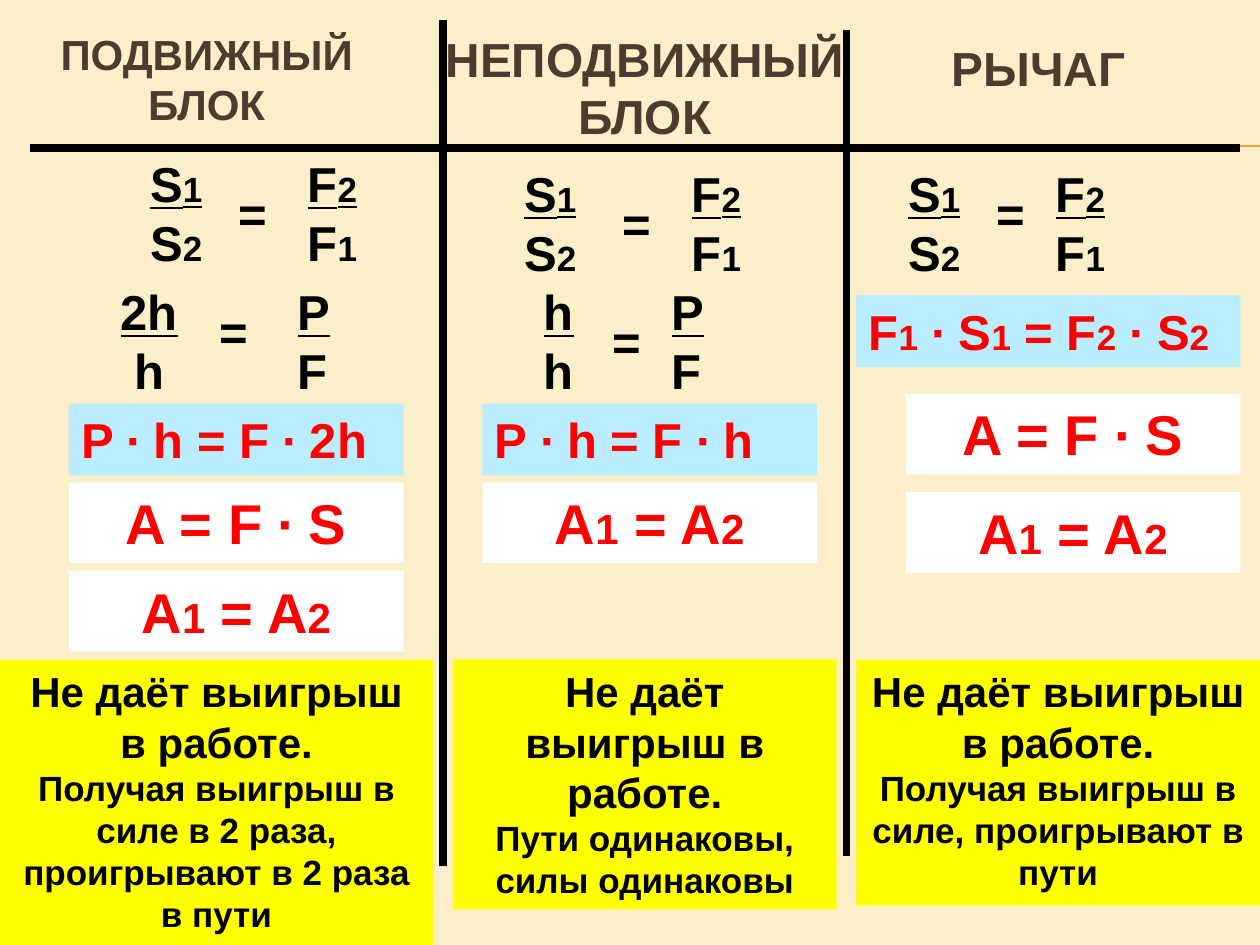
from dataclasses import dataclass

from lxml import etree
from pptx import Presentation
from pptx.dml.color import RGBColor
from pptx.enum.shapes import MSO_CONNECTOR, MSO_SHAPE
from pptx.enum.text import MSO_ANCHOR, MSO_AUTO_SIZE, PP_ALIGN
from pptx.oxml.ns import qn
from pptx.util import Inches, Pt

LEFT, CENTER = PP_ALIGN.LEFT, PP_ALIGN.CENTER
TOP, MIDDLE = MSO_ANCHOR.TOP, MSO_ANCHOR.MIDDLE
GROW, FIXED = MSO_AUTO_SIZE.SHAPE_TO_FIT_TEXT, MSO_AUTO_SIZE.NONE
RECTANGLE, STRAIGHT = MSO_SHAPE.RECTANGLE, MSO_CONNECTOR.STRAIGHT
TITLE_ONLY = 5


@dataclass(frozen=True)
class Theme:
    font: str = "Arial"
    page: str = "FBEEC9"
    accent: str = "F0A22E"
    heading: str = "4E3B30"
    ink: str = "000000"
    formula: str = "FF0000"
    law: str = "B9EDFF"
    work: str = "FFFFFF"
    verdict: str = "FFFF00"
    title_size: float = 24
    heading_size: float = 27.3
    work_size: float = 32
    work_index: float = 24
    law_size: float = 28
    law_index: float = 20
    verdict_size: float = 24
    detail_size: float = 20


THEME = Theme()
WIDTH, HEIGHT = Inches(10), Inches(7.5)
COLUMNS, ROWS = 128, 96  # square grid cells over the whole slide
RULE_ROW = 15
RATIO_WIDTH, RATIO_HEIGHT = 11, 13.3
LAW_HEIGHT, WORK_HEIGHT = 7.3, 8.2
VERDICT_ROW = 67


def place(left, top, width, height):
    cell_x, cell_y = WIDTH / COLUMNS, HEIGHT / ROWS
    return [round(v) for v in (left * cell_x, top * cell_y, width * cell_x, height * cell_y)]


def write(box, *lines, sizes, index=None, color=THEME.ink, align=LEFT,
          anchor=TOP, fit=GROW, underline_first=False):
    """Fill a box; an underscore makes the next character a small index."""
    frame = box.text_frame
    frame.word_wrap, frame.vertical_anchor, frame.auto_size = True, anchor, fit
    for number, (line, size) in enumerate(zip(lines, sizes)):
        para = frame.paragraphs[0] if number == 0 else frame.add_paragraph()
        para.alignment = align
        first, *indexed = line.split("_")
        parts = [(first, size)]
        for part in indexed:
            parts += [(part[0], index), (part[1:], size)]
        for text, points in parts:
            if text:
                span = para.add_run()
                span.text = text
                span.font.name, span.font.size, span.font.bold = THEME.font, Pt(points), True
                span.font.color.rgb = RGBColor.from_string(color)
                span.font.underline = underline_first and number == 0


def add_text(page, area, *lines, **style):
    write(page.shapes.add_textbox(*place(*area)), *lines, **style)


def add_panel(page, area, fill, *lines, **style):
    panel = page.shapes.add_shape(RECTANGLE, *place(*area))
    panel.shadow.inherit = False
    panel.fill.solid()
    panel.fill.fore_color.rgb = RGBColor.from_string(fill)
    panel.line.fill.background()
    write(panel, *lines, **style)


def add_rule(page, start, end, color, weight):
    x1, y1, x2, y2 = place(*start, *end)
    rule = page.shapes.add_connector(STRAIGHT, x1, y1, x2, y2)
    rule.line.color.rgb = RGBColor.from_string(color)
    rule.line.width = Pt(weight)
    etree.SubElement(rule._element.spPr, qn("a:effectLst"))


def add_proportion(page, left, top, ratios, equals):
    """Two stacked ratios with an equals sign, offset from left and top."""
    for offset, upper, lower, align in ratios:
        add_text(page, (left + offset, top, RATIO_WIDTH, RATIO_HEIGHT), upper, lower,
                 sizes=[THEME.law_size] * 2, index=THEME.law_index,
                 align=align, underline_first=True)
    across, down = equals
    add_text(page, (left + across, top + down, 7, LAW_HEIGHT), "=", sizes=[THEME.law_size])


def ratio(offset, upper, lower, align=LEFT):
    return offset, upper, lower, align


def path_force(first, second):
    return [ratio(first, "S_1", "S_2"), ratio(second, "F_2", "F_1")]


def add_column(page, left, heading, proportions, law, works, verdict):
    # Heading
    text, area, size = heading
    offset, top, width, height = area
    area = (left + offset, top, width, height)
    style = dict(sizes=[size], color=THEME.heading, align=CENTER, anchor=MIDDLE, fit=FIXED)
    if left == 0:
        title = page.shapes.title
        title.left, title.top, title.width, title.height = place(*area)
        write(title, text, **style)
    else:
        add_text(page, area, text, **style)
    # Proportions
    for top, ratios, equals in proportions:
        add_proportion(page, left, top, ratios, equals)
    # Resulting law
    text, offset, top, width = law
    add_panel(page, (left + offset, top, width, LAW_HEIGHT), THEME.law, text,
              sizes=[THEME.law_size], index=THEME.law_index, color=THEME.formula)
    # Work formulas
    for text, offset, top in works:
        add_panel(page, (left + offset, top, 34, WORK_HEIGHT), THEME.work, text,
                  sizes=[THEME.work_size], index=THEME.work_index,
                  color=THEME.formula, align=CENTER)
    # Verdict
    detail, offset, width, height = verdict
    add_panel(page, (left + offset, VERDICT_ROW, width, height), THEME.verdict,
              "Не даёт выигрыш в работе.", detail,
              sizes=[THEME.verdict_size, THEME.detail_size], align=CENTER)


def add_rules(page):
    for row in (14.75, 14.85):
        add_rule(page, (7.2, row), (COLUMNS, row), THEME.accent, 0.75)
    for start, end in (((45, 2), (45, 88)),
                       ((3, RULE_ROW), (126, RULE_ROW)),
                       ((86, 3), (86, 87))):
        add_rule(page, start, end, THEME.ink, 4.5)


WORK, EQUAL_WORK = "A = F ∙ S", "A_1 = A_2"
MECHANISMS = [
    dict(left=0,
         heading=("ПОДВИЖНЫЙ БЛОК", (3, 2, 36, 12), THEME.title_size),
         proportions=[(15, path_force(14, 30), (23, 3)),
                      (28, [ratio(9.65, "2h", "h", CENTER), ratio(29, "P", "F")], (21, 2))],
         law=("P ∙ h = F ∙ 2h", 7, 41, 34),
         works=[(WORK, 7, 49), (EQUAL_WORK, 7, 58)],
         verdict=("Получая выигрыш в силе в 2 раза, проигрывают в 2 раза в пути", 0, 44, 29)),
    dict(left=45,
         heading=("НЕПОДВИЖНЫЙ БЛОК", (-3, 2, 47, 13.6), THEME.heading_size),
         proportions=[(16, path_force(7, 24), (17, 3)),
                      (28, [ratio(9, "h", "h"), ratio(22, "P", "F")], (16, 3))],
         law=("P ∙ h = F ∙ h", 4, 41, 34),
         works=[(EQUAL_WORK, 4, 49)],
         verdict=("Пути одинаковы, силы одинаковы", 1, 39, 25.4)),
    dict(left=86,
         heading=("РЫЧАГ", (3, 0, 33, 13.6), THEME.heading_size),
         proportions=[(16, path_force(5, 20), (14, 2))],
         law=("F_1 ∙ S_1 = F_2 ∙ S_2", 1, 30, 39),
         works=[(WORK, 6, 40), (EQUAL_WORK, 6, 50)],
         verdict=("Получая выигрыш в силе, проигрывают в пути", 1, 41, 25)),
]


def main():
    deck = Presentation()
    deck.slide_width, deck.slide_height = WIDTH, HEIGHT
    page = deck.slides.add_slide(deck.slide_layouts[TITLE_ONLY])
    page.background.fill.solid()
    page.background.fill.fore_color.rgb = RGBColor.from_string(THEME.page)
    add_rules(page)
    for mechanism in MECHANISMS:
        add_column(page, **mechanism)
    deck.save("out.pptx")


if __name__ == "__main__":
    main()
